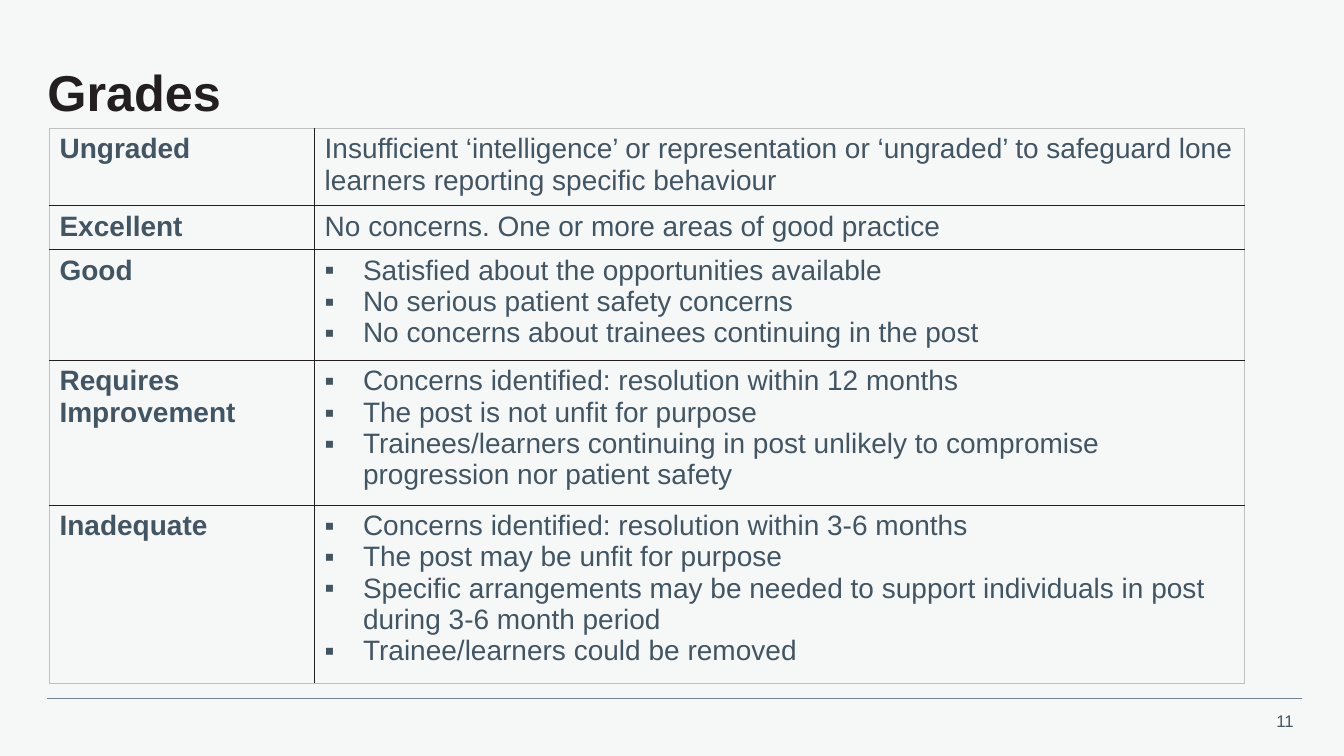
from dataclasses import dataclass

from lxml import etree
from pptx import Presentation, util as u
from pptx.dml.color import RGBColor
from pptx.enum import shapes, text
from pptx.oxml import ns


@dataclass(frozen=True)
class Theme:
    font: str = "Arial"
    page: str = "F6F8F8"
    heading: str = "231F20"
    body: str = "425563"
    rule: str = "768692"
    frame: str = "BFBFBF"
    heading_size: int = 36
    body_size: int = 20
    number_size: int = 12


GRADES = [
    ("Ungraded", ["Insufficient ‘intelligence’ or representation or ‘ungraded’ to safeguard lone learners reporting specific behaviour"], 2),
    ("Excellent", ["No concerns. One or more areas of good practice"], 1),
    ("Good", [
        "Satisfied about the opportunities available",
        "No serious patient safety concerns",
        "No concerns about trainees continuing in the post",
    ], 3),
    ("Requires Improvement", [
        "Concerns identified: resolution within 12 months",
        "The post is not unfit for purpose",
        "Trainees/learners continuing in post unlikely to compromise progression nor patient safety",
    ], 4),
    ("Inadequate", [
        "Concerns identified: resolution within 3-6 months",
        "The post may be unfit for purpose",
        "Specific arrangements may be needed to support individuals in post during 3-6 month period",
        "Trainee/learners could be removed",
    ], 5),
]


class SlideBuilder:
    def __init__(self, deck, theme):
        self.deck = deck
        self.theme = theme
        self.slide = deck.slides.add_slide(deck.slide_layouts[6])
        backdrop = self.slide.background.fill
        backdrop.solid()
        backdrop.fore_color.rgb = RGBColor.from_string(theme.page)

    def across(self, percent):
        return u.Emu(round(self.deck.slide_width * percent / 100))

    def down(self, percent):
        return u.Emu(round(self.deck.slide_height * percent / 100))

    def style(self, paragraph, size, color, bold=False):
        for run in paragraph.runs:
            run.font.name = self.theme.font
            run.font.size = u.Pt(size)
            run.font.bold = bold
            run.font.color.rgb = RGBColor.from_string(color)

    def label(self, wording, left, top, width, height, size, color, bold=False, align=None):
        box = self.slide.shapes.add_textbox(
            self.across(left), self.down(top), self.across(width), self.down(height))
        frame = box.text_frame
        frame.text = wording
        frame.word_wrap = True
        frame.vertical_anchor = text.MSO_ANCHOR.MIDDLE
        if align is None:
            frame.margin_left = frame.margin_right = 0
            frame.margin_top = frame.margin_bottom = 0
        paragraph = frame.paragraphs[0]
        paragraph.alignment = align
        paragraph.line_spacing = 0.9 if bold else 1.0
        self.style(paragraph, size, color, bold)

    def rule(self, left, right, top):
        line = self.slide.shapes.add_connector(
            shapes.MSO_CONNECTOR.STRAIGHT,
            self.across(left), self.down(top), self.across(right), self.down(top))
        line.line.color.rgb = RGBColor.from_string(self.theme.rule)
        line.line.width = u.Pt(0.5)
        etree.SubElement(line._element.spPr, ns.qn("a:effectLst"))

    def bullet(self, paragraph):
        properties = paragraph._p.get_or_add_pPr()
        indent = u.Inches(0.38)
        properties.set("marL", str(indent))
        properties.set("indent", str(-indent))
        etree.SubElement(properties, ns.qn("a:buFont"), typeface=self.theme.font)
        etree.SubElement(properties, ns.qn("a:buChar"), char="▪")

    def borders(self, cell, outer_sides):
        properties = cell._tc.get_or_add_tcPr()
        for position, side in enumerate("LRTB"):
            edge = etree.Element(ns.qn(f"a:ln{side}"), w=str(u.Pt(1)))
            fill = etree.SubElement(edge, ns.qn("a:solidFill"))
            color = self.theme.frame if side in outer_sides else self.theme.heading
            etree.SubElement(fill, ns.qn("a:srgbClr"), val=color)
            properties.insert(position, edge)

    def fill_cell(self, cell, points, bold, outer_sides):
        cell.fill.background()
        self.borders(cell, outer_sides)
        cell.text_frame.text = "\n".join(points)
        for paragraph in cell.text_frame.paragraphs:
            if len(points) > 1:
                self.bullet(paragraph)
            self.style(paragraph, self.theme.body_size, self.theme.body, bold)

    def grade_table(self, grades, left, top, widths, line_height, padding):
        heights = [lines * line_height + padding for _, _, lines in grades]
        table = self.slide.shapes.add_table(
            len(grades), len(widths), self.across(left), self.down(top),
            self.across(sum(widths)), self.down(sum(heights))).table
        table.first_row = table.horz_banding = False
        for column, width in zip(table.columns, widths):
            column.width = self.across(width)
        last = len(grades) - 1
        for index, (grade, points, _) in enumerate(grades):
            table.rows[index].height = self.down(heights[index])
            ends = ("T" if index == 0 else "") + ("B" if index == last else "")
            self.fill_cell(table.cell(index, 0), [grade], True, ends + "L")
            self.fill_cell(table.cell(index, 1), points, False, ends + "R")


def main():
    deck = Presentation()
    deck.slide_width = u.Inches(13.33)
    deck.slide_height = u.Inches(7.5)
    theme = Theme()
    page = SlideBuilder(deck, theme)
    page.rule(3.53, 96.85, 92.4)
    page.label("11", 92, 93.33, 5, 4, theme.number_size, theme.body,
               align=text.PP_ALIGN.RIGHT)
    page.label("Grades", 3.53, 6.27, 93.55, 12.67, theme.heading_size, theme.heading, bold=True)
    page.grade_table(GRADES, 3.68, 17, (19.73, 69.17), line_height=4.1, padding=1.33)
    deck.save("out.pptx")


if __name__ == "__main__":
    main()
